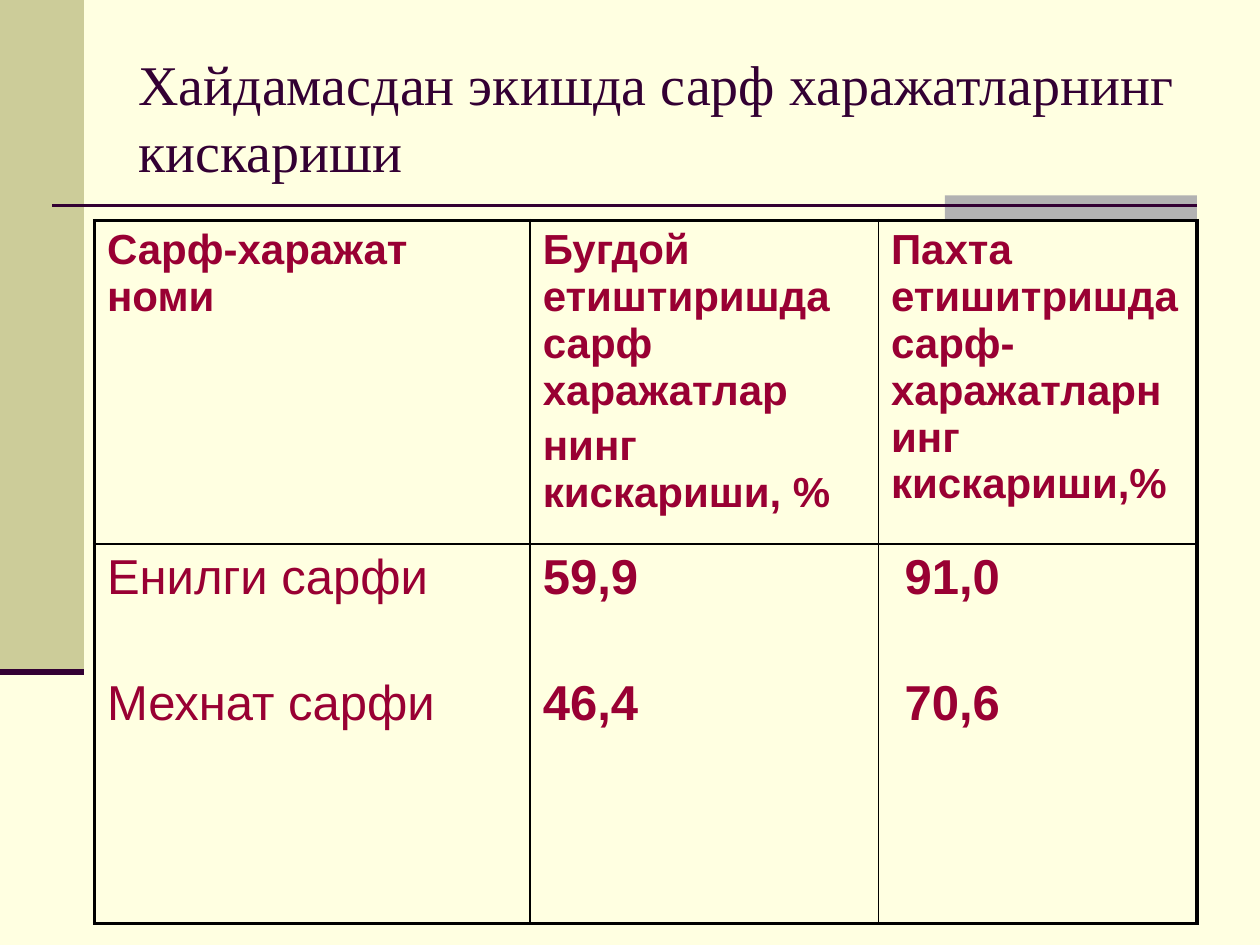
from lxml import etree
from pptx import Presentation
from pptx import util as u
from pptx.dml.color import RGBColor
from pptx.enum import shapes, text
from pptx.oxml import ns

Pt = u.Pt
CREAM = RGBColor(0xFF, 0xFF, 0xE1)
OLIVE = RGBColor(0xCC, 0xCC, 0x99)
GREY = RGBColor(0xB2, 0xB2, 0xB2)
PLUM = RGBColor(0x33, 0x00, 0x33)
CRIMSON = RGBColor(0x99, 0x00, 0x33)
BLACK = RGBColor(0, 0, 0)


def format_font(font, color, values):
    font.color.rgb = color
    for name, value in values.items():
        setattr(font, name, value)


def add_border(cell, side, width):
    line = etree.SubElement(cell._tc.get_or_add_tcPr(), ns.qn(f"a:ln{side}"), w=str(Pt(width)))
    fill = etree.SubElement(line, ns.qn("a:solidFill"))
    etree.SubElement(fill, ns.qn("a:srgbClr"), val=str(BLACK))


prs = Presentation()
prs.slide_width, prs.slide_height = Pt(720), Pt(540)
slide = prs.slides.add_slide(prs.slide_layouts[6])
slide.background.fill.solid()
slide.background.fill.fore_color.rgb = CREAM

for left, top, width, height, color in [
    (0, 0, 48, 384, OLIVE),
    (540, 111.6, 144, 14.4, GREY),
]:
    band = slide.shapes.add_shape(
        shapes.MSO_SHAPE.RECTANGLE, Pt(left), Pt(top), Pt(width), Pt(height))
    band.shadow.inherit = False
    band.fill.solid()
    band.fill.fore_color.rgb = color
    band.line.fill.background()

for start, end, y, width in [(30, 684, 117.6, 1.5), (0, 48, 384, 3.5)]:
    rule = slide.shapes.add_connector(
        shapes.MSO_CONNECTOR.STRAIGHT, Pt(start), Pt(y), Pt(end), Pt(y))
    rule.line.color.rgb = PLUM
    rule.line.width = Pt(width)
    etree.SubElement(rule._element.spPr, ns.qn("a:effectLst"))

heading = slide.shapes.add_textbox(Pt(72), Pt(21.6), Pt(612), Pt(90)).text_frame
heading.word_wrap = True
heading.vertical_anchor = text.MSO_ANCHOR.MIDDLE
heading.text = "Хайдамасдан экишда сарф харажатларнинг кискариши"
format_font(heading.paragraphs[0].runs[0].font, PLUM, {"name": "Times New Roman", "size": Pt(32)})

column_widths = [249, 199, 182]
row_heights = [172, 217]
costs = [
    [["Сарф-харажат номи"],
     ["Бугдой етиштиришда сарф харажатлар", "нинг кискариши, %"],
     ["Пахта етишитришда сарф-харажатларнинг кискариши,%"]],
    [["Енилги сарфи", "Мехнат сарфи"], ["59,9", "46,4"], ["91,0", "70,6"]],
]
row_sizes = [24, 28]
row_gaps = [4.8, 41]

table = slide.shapes.add_table(
    2, 3, Pt(54), Pt(126), Pt(sum(column_widths)), Pt(sum(row_heights))).table
table.first_row = table.horz_banding = False
for column, width in zip(table.columns, column_widths):
    column.width = Pt(width)

for r, row in enumerate(costs):
    table.rows[r].height = Pt(row_heights[r])
    for c, entries in enumerate(row):
        cell = table.cell(r, c)
        outer_edges = {"L": c == 0, "R": c == 2, "T": r == 0, "B": r == 1}
        for side, outer in outer_edges.items():
            add_border(cell, side, 2.25 if outer else 1)
        cell.fill.background()
        cell.margin_left = Pt(15 if (r, c) == (1, 2) else 7.2)
        cell.text = "\n".join(entries)
        values = {"name": "Arial", "size": Pt(row_sizes[r]), "bold": (r, c) != (1, 0)}
        for i, entry in enumerate(cell.text_frame.paragraphs):
            entry.space_before = Pt(row_gaps[r] if i else 0)
            format_font(entry.runs[0].font, CRIMSON, values)

prs.save("out.pptx")
